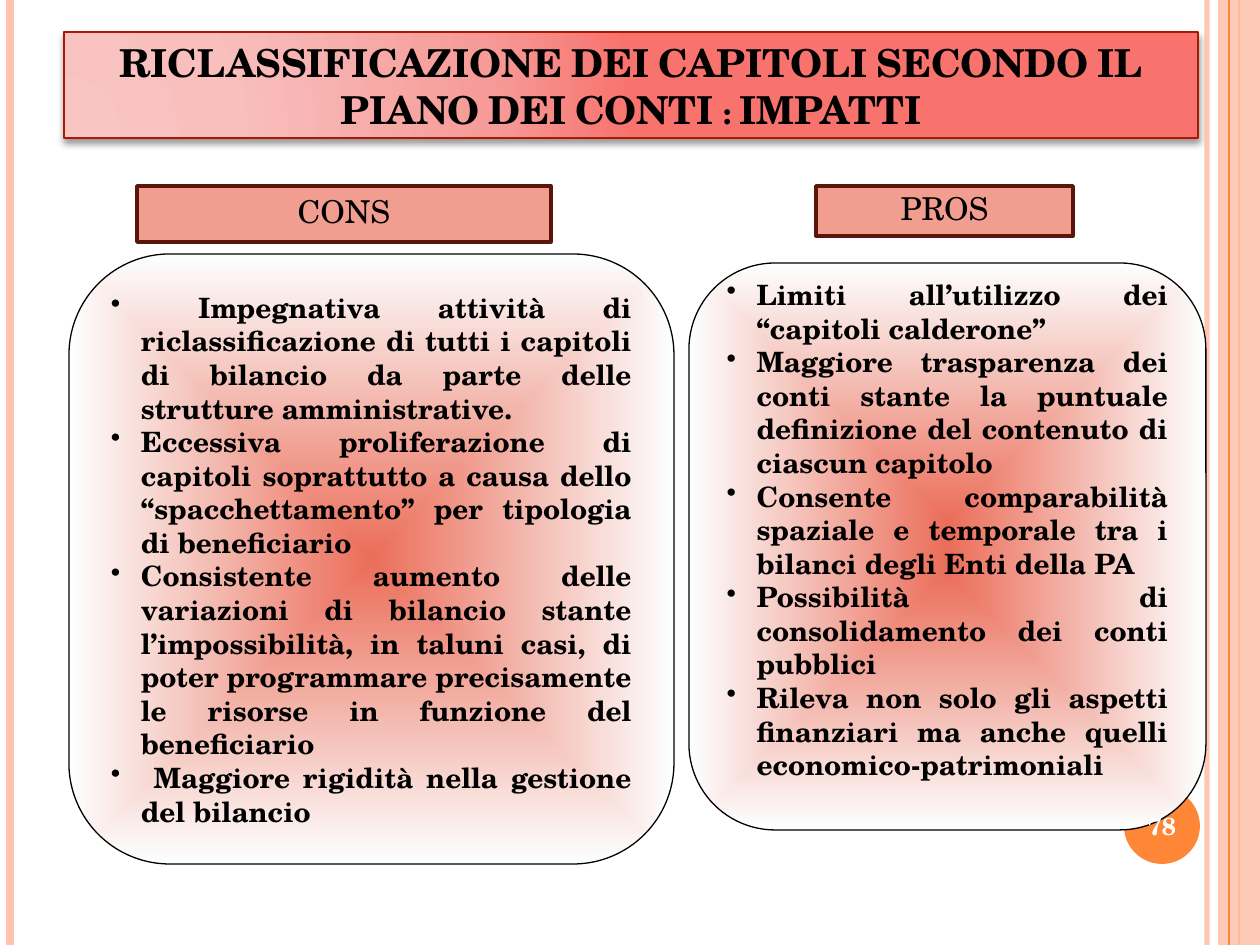
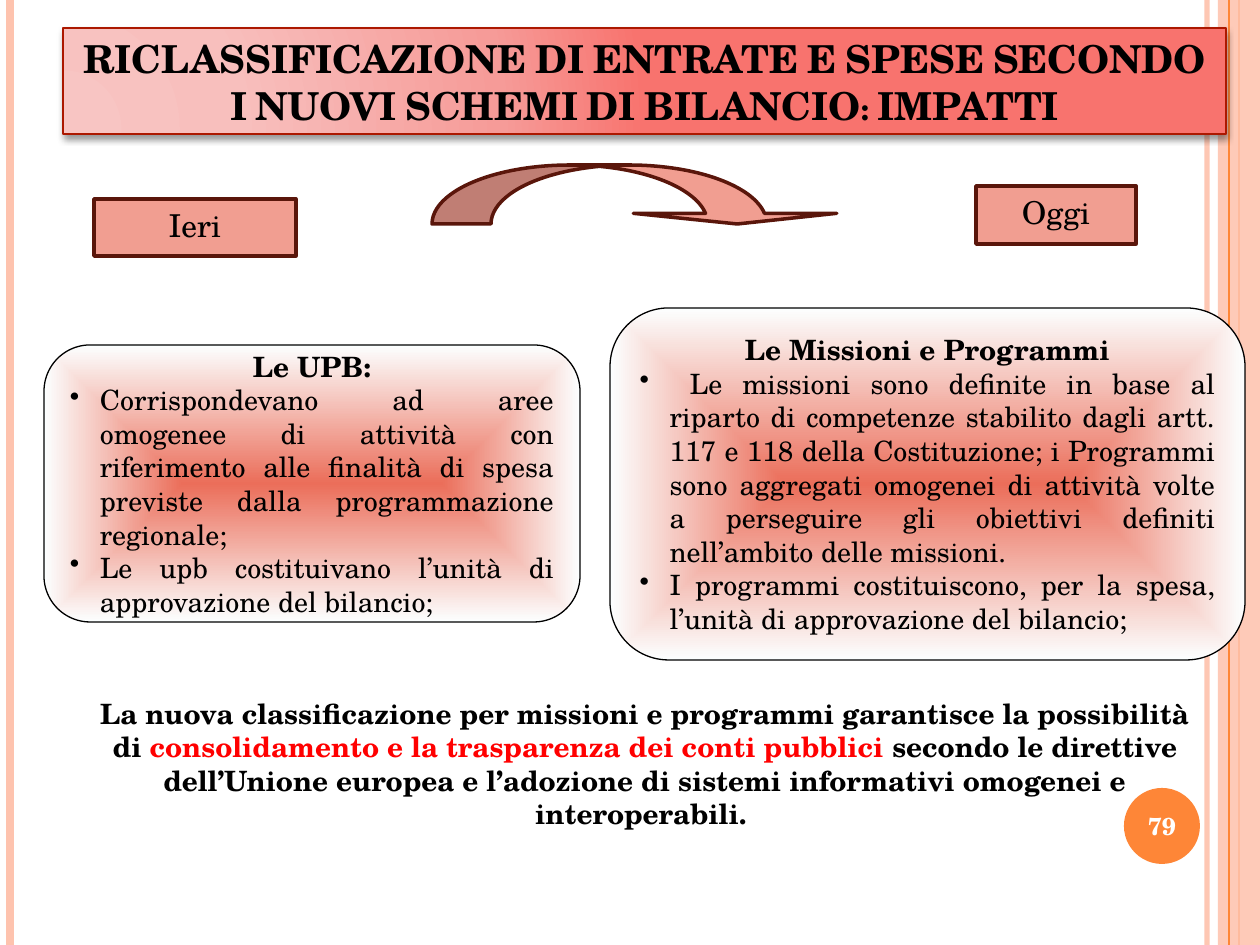
from pptx import Presentation
from pptx.dml.color import RGBColor
from pptx.enum.shapes import MSO_CONNECTOR, MSO_SHAPE
from pptx.enum.text import MSO_ANCHOR, PP_ALIGN
from pptx.oxml import parse_xml
from pptx.oxml.ns import nsdecls, qn
from pptx.oxml.xmlchemy import OxmlElement
from pptx.util import Pt

EMU_PER_PX = 914400 / 126
WIDTH, HEIGHT = 1260, 945
FONT = "TeX Gyre Schola"
BLACK, WHITE, RED = "000000", "FFFFFF", "FF0000"
PEACH, ORANGE = "FEC3AE", "FE8637"
SALMON, MAROON, TITLE_EDGE = "F19E91", "5A160B", "AC1800"
PANEL_STOPS = [(0, "EB6E5A"), (100, "FCFFFF")]
TITLE_STOPS = [(0, "F8C5C3"), (30, "F8BFBD"), (75, "F69B98"), (100, "F8736E")]
RECT, ROUNDED = MSO_SHAPE.RECTANGLE, MSO_SHAPE.ROUNDED_RECTANGLE
OVAL, CURVED_ARROW = MSO_SHAPE.OVAL, MSO_SHAPE.CURVED_DOWN_ARROW
STRAIGHT = MSO_CONNECTOR.STRAIGHT
CENTER, JUSTIFY = PP_ALIGN.CENTER, PP_ALIGN.JUSTIFY
TOP, MIDDLE, BOTTOM = MSO_ANCHOR.TOP, MSO_ANCHOR.MIDDLE, MSO_ANCHOR.BOTTOM
LINE_16PT = 34
BULLET_INDENT = 30

TITLE_FORMAT = {"size": Pt(22), "bold": True}
LABEL_FORMAT = {"size": Pt(18), "bold": False}
BODY_FORMAT = {"size": Pt(16), "bold": False}
STRONG_FORMAT = {"size": Pt(16), "bold": True}
NUMBER_FORMAT = {"size": Pt(14), "bold": True}


def px(n):
    return round(n * EMU_PER_PX)


def rgb(value):
    return RGBColor.from_string(value)


def set_alpha(element, percent):
    alpha = OxmlElement("a:alpha")
    alpha.set("val", str(percent * 1000))
    next(element.iter(qn("a:srgbClr"))).append(alpha)


def set_gradient(sp, stops, path, focus):
    gs = "".join(
        f'<a:gs pos="{pos * 1000}"><a:srgbClr val="{color}"/></a:gs>'
        for pos, color in stops
    )
    edges = " ".join(f'{side}="{v * 1000}"' for side, v in zip("ltrb", focus))
    sp.fill.background()
    spPr = sp._element.spPr
    spPr.replace(spPr.find(qn("a:noFill")), parse_xml(
        f'<a:gradFill {nsdecls("a")} rotWithShape="1"><a:gsLst>{gs}</a:gsLst>'
        f'<a:path path="{path}"><a:fillToRect {edges}/></a:path></a:gradFill>'
    ))


def add_shadow(sp):
    sp._element.spPr.find(qn("a:effectLst")).append(parse_xml(
        f'<a:outerShdw {nsdecls("a")} blurRad="{Pt(4)}" dist="{Pt(2)}" '
        f'dir="5400000" rotWithShape="0"><a:srgbClr val="{BLACK}">'
        '<a:alpha val="40000"/></a:srgbClr></a:outerShdw>'
    ))


def add_shape(s, kind, box, fill=None, line=None, weight=1):
    sp = s.shapes.add_shape(kind, *map(px, box))
    sp.shadow.inherit = False
    if fill:
        sp.fill.solid()
        sp.fill.fore_color.rgb = rgb(fill)
    if line:
        sp.line.color.rgb = rgb(line)
        sp.line.width = Pt(weight)
    else:
        sp.line.fill.background()
    return sp


def add_vertical(s, x, color, weight, alpha=100):
    line = s.shapes.add_connector(STRAIGHT, px(x), 0, px(x), px(HEIGHT))
    line.line.color.rgb = rgb(color)
    line.line.width = Pt(weight)
    spPr = line._element.spPr
    spPr.append(OxmlElement("a:effectLst"))
    if alpha < 100:
        set_alpha(spPr, alpha)


def set_frame(sp, anchor):
    tf = sp.text_frame
    tf.word_wrap = True
    tf.vertical_anchor = anchor
    return tf


def add_run(p, text, fmt, color=BLACK):
    r = p.add_run()
    r.text = text
    for name, value in {"name": FONT, **fmt}.items():
        setattr(r.font, name, value)
    r.font.color.rgb = rgb(color)
    return r


def add_bullet(p):
    pPr = p._p.get_or_add_pPr()
    pPr.set("marL", str(px(BULLET_INDENT)))
    pPr.set("indent", str(-px(BULLET_INDENT)))
    bullet = OxmlElement("a:buChar")
    bullet.set("char", "•")
    pPr.append(bullet)


def add_frame(s):
    add_vertical(s, 1207, PEACH, 3, 93)
    add_vertical(s, 10, PEACH, 4.5)
    add_vertical(s, 1239, ORANGE, 1.5)
    band = add_shape(s, RECT, (1218, 0, WIDTH - 1218, HEIGHT), PEACH)
    set_alpha(band._element.spPr, 87)
    add_vertical(s, 1229, ORANGE, 0.75)
    add_shape(s, OVAL, (1124, 788, 76, 76), ORANGE)


def add_text(s, box, anchor, runs):
    sp = s.shapes.add_textbox(*map(px, box))
    p = set_frame(sp, anchor).paragraphs[0]
    p.alignment = CENTER
    for text, fmt, color in runs:
        add_run(p, text, fmt, color)


def add_number(s, number):
    add_text(s, (1120, 790, 84, 72), MIDDLE, [(str(number), NUMBER_FORMAT, WHITE)])


def add_title(s, box, text):
    sp = add_shape(s, RECT, box, line=TITLE_EDGE)
    set_gradient(sp, TITLE_STOPS, "circle", (5, 100, 120, 10))
    add_shadow(sp)
    p = set_frame(sp, BOTTOM).paragraphs[0]
    p.alignment = CENTER
    r = add_run(p, text, TITLE_FORMAT)
    r._r.get_or_add_rPr().set("cap", "small")


def add_label(s, box, text):
    sp = add_shape(s, RECT, box, SALMON, MAROON, 2)
    p = set_frame(sp, MIDDLE).paragraphs[0]
    p.alignment = CENTER
    p.line_spacing = 0.85
    add_run(p, text, LABEL_FORMAT)


def add_panel(s, box, bullets, fmt, heading=None, space_below=0):
    sp = add_shape(s, ROUNDED, box, line=BLACK, weight=0.75)
    set_gradient(sp, PANEL_STOPS, "shape", (50, 50, 50, 50))
    tf = set_frame(sp, MIDDLE)
    tf.margin_bottom += px(space_below)
    p = tf.paragraphs[0]
    if heading:
        p.alignment = CENTER
        add_run(p, heading, STRONG_FORMAT)
    for i, text in enumerate(bullets):
        if i or heading:
            p = tf.add_paragraph()
        p.alignment = JUSTIFY
        add_bullet(p)
        add_run(p, text, fmt)


def add_arrow(s, box):
    sp = add_shape(s, CURVED_ARROW, box, SALMON, MAROON, 2)
    for i, value in enumerate((1.81, 4.03, 0.18)):
        sp.adjustments[i] = value


def build_pros_cons(s):
    add_frame(s)
    add_panel(s, (69, 254, 605, 610), [
        " Impegnativa attività di riclassificazione di tutti i capitoli di "
        "bilancio da parte delle strutture amministrative.",
        "Eccessiva proliferazione di capitoli soprattutto a causa dello "
        "“spacchettamento” per tipologia di beneficiario",
        "Consistente aumento delle variazioni di bilancio stante "
        "l’impossibilità, in taluni casi, di poter programmare precisamente "
        "le risorse in funzione del beneficiario",
        " Maggiore rigidità nella gestione del bilancio",
    ], STRONG_FORMAT)
    add_panel(s, (689, 263, 517, 567), [
        "Limiti all’utilizzo dei “capitoli calderone”",
        "Maggiore trasparenza dei conti stante la puntuale definizione del "
        "contenuto di ciascun capitolo",
        "Consente comparabilità spaziale e temporale tra i bilanci degli "
        "Enti della PA",
        "Possibilità di consolidamento dei conti pubblici",
        "Rileva non solo gli aspetti finanziari ma anche quelli "
        "economico-patrimoniali",
    ], STRONG_FORMAT, space_below=LINE_16PT)
    add_label(s, (137, 186, 414, 56), "CONS")
    add_label(s, (816, 186, 257, 50), "PROS")
    add_title(s, (64, 32, 1134, 106),
              "RICLASSIFICAZIONE DEI CAPITOLI SECONDO IL PIANO DEI CONTI : IMPATTI")
    add_number(s, 78)


def build_before_after(s):
    add_frame(s)
    add_arrow(s, (432, 165, 407, 59))
    add_label(s, (94, 199, 202, 57), "Ieri")
    add_label(s, (976, 186, 160, 58), "Oggi")
    add_panel(s, (44, 345, 536, 277), [
        "Corrispondevano ad aree omogenee di attività con riferimento alle "
        "finalità di spesa previste dalla programmazione regionale;",
        "Le upb costituivano l’unità di approvazione del bilancio;",
    ], BODY_FORMAT, "Le UPB:")
    add_panel(s, (610, 308, 635, 352), [
        " Le missioni sono definite in base al riparto di competenze "
        "stabilito dagli artt. 117 e 118 della Costituzione; i Programmi sono "
        "aggregati omogenei di attività volte a perseguire gli obiettivi "
        "definiti nell’ambito delle missioni.",
        "I programmi costituiscono, per la spesa, l’unità di approvazione "
        "del bilancio;",
    ], BODY_FORMAT, "Le Missioni e Programmi")
    add_text(s, (74, 690, 1142, 179), TOP, [
        ("La nuova classificazione per missioni e programmi garantisce la "
         "possibilità di ", STRONG_FORMAT, BLACK),
        ("consolidamento e la trasparenza dei conti pubblici ",
         STRONG_FORMAT, RED),
        ("secondo le direttive dell’Unione europea e l’adozione di sistemi "
         "informativi omogenei e interoperabili. ", STRONG_FORMAT, BLACK),
    ])
    add_title(s, (63, 28, 1163, 106),
              "RICLASSIFICAZIONE DI ENTRATE E SPESE SECONDO I NUOVI SCHEMI DI "
              "BILANCIO: IMPATTI")
    add_number(s, 79)


def main():
    prs = Presentation()
    prs.slide_width, prs.slide_height = px(WIDTH), px(HEIGHT)
    for build in (build_pros_cons, build_before_after):
        build(prs.slides.add_slide(prs.slide_layouts[6]))
    prs.save("out.pptx")


if __name__ == "__main__":
    main()
